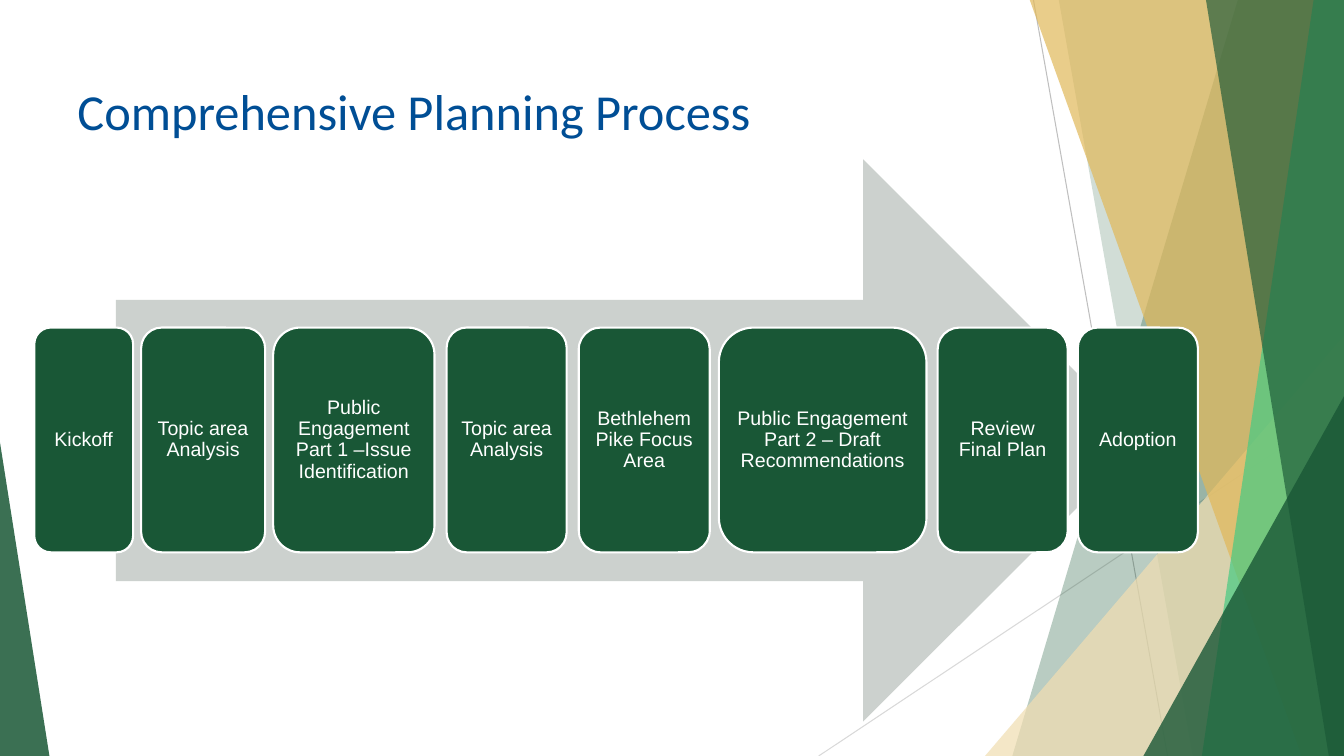
"""Builds the Comprehensive Planning Process slide."""
from dataclasses import dataclass

from lxml import etree
from pptx import Presentation
from pptx import util as u
from pptx.dml.color import RGBColor
from pptx.enum import shapes, text
from pptx.oxml import ns

PX = 9144
WIDTH, HEIGHT = 1333, 750
STEP_TOP, STEP_HEIGHT = 325, 223
STEPS = [
    (34, 98, "Kickoff"),
    (140, 123, "Topic area Analysis"),
    (271, 160, "Public Engagement Part 1 –Issue Identification"),
    (443, 119, "Topic area Analysis"),
    (574, 130, "Bethlehem Pike Focus Area"),
    (713, 206, "Public Engagement Part 2 – Draft Recommendations"),
    (930, 129, "Review Final Plan"),
    (1069, 119, "Adoption"),
]


@dataclass(frozen=True)
class Theme:
    """Colours, fonts and type sizes of the slide."""
    forest: str = "195736"
    mint: str = "46CA83"
    gold: str = "E1B859"
    sand: str = "F1DEB2"
    arrow: str = "CCD1CE"
    dark_rule: str = "BFBFBF"
    light_rule: str = "D9D9D9"
    title: str = "004E95"
    white: str = "FFFFFF"
    title_font: str = "Calibri"
    step_font: str = "Arial"
    title_size: int = 36
    step_size: int = 14


THEME = Theme()


def px(*lengths):
    """Turns pixel lengths into EMU."""
    return [u.Emu(length * PX) for length in lengths]


def paint(part, colour, opacity=100):
    """Gives a shape a flat fill without outline or shadow."""
    part.shadow.inherit = False
    part.line.fill.background()
    part.fill.solid()
    part.fill.fore_color.rgb = RGBColor.from_string(colour)
    if opacity < 100:
        tint = part.fill._xPr.find(".//" + ns.qn("a:srgbClr"))
        etree.SubElement(tint, ns.qn("a:alpha"), val=str(opacity * 1000))


def style_text(paragraph, font, size, colour):
    """Sets the typeface, size and colour of a paragraph's runs."""
    for run in paragraph.runs:
        run.font.name = font
        run.font.size = u.Pt(size)
        run.font.color.rgb = RGBColor.from_string(colour)


def add_rule(slide, start, end, colour):
    """Draws a thin straight line of the backdrop."""
    rule = slide.shapes.add_connector(
        shapes.MSO_CONNECTOR.STRAIGHT, *px(*start, *end))
    rule.line.color.rgb = RGBColor.from_string(colour)
    rule.line.width = u.Pt(0.75)
    etree.SubElement(rule._element.spPr, ns.qn("a:effectLst"))


def add_band(slide, top_x, bottom_x, colour, opacity):
    """Fills the area between a slanted edge and the slide's right side."""
    outline = slide.shapes.build_freeform(top_x, -1, scale=PX)
    outline.add_line_segments(
        [(WIDTH, -1), (WIDTH, HEIGHT), (bottom_x, HEIGHT)], close=True)
    paint(outline.convert_to_shape(), colour, opacity)


def add_corner(slide, left, top, width, peak, colour, opacity):
    """Draws a right triangle standing on the slide's bottom edge."""
    corner = slide.shapes.add_shape(
        shapes.MSO_SHAPE.ISOSCELES_TRIANGLE, *px(left, top, width, HEIGHT - top))
    corner.adjustments[0] = peak
    paint(corner, colour, opacity)


def add_backdrop(slide):
    """Layers the translucent facets from back to front."""
    add_rule(slide, (1025, 0), (1158, HEIGHT), THEME.dark_rule)
    add_rule(slide, (WIDTH, 403), (812, HEIGHT), THEME.light_rule)
    add_band(slide, 1228, 1004, THEME.forest, 30)
    add_band(slide, 1050, 1183, THEME.forest, 20)
    add_corner(slide, 977, 333, 356, 1, THEME.sand, 72)
    add_band(slide, 1021, 1291, THEME.gold, 70)
    add_band(slide, 1303, 1192, THEME.mint, 70)
    add_band(slide, 1196, 1318, THEME.forest, 65)
    add_corner(slide, 1134, 393, 199, 1, THEME.forest, 80)
    add_corner(slide, 0, 439, 49, 0, THEME.forest, 85)


def add_title(slide, wording):
    """Writes the slide title."""
    title = slide.shapes.add_textbox(*px(67, 75, 940, 144)).text_frame
    title.word_wrap = True
    title.text = wording
    style_text(title.paragraphs[0], THEME.title_font, THEME.title_size, THEME.title)


def add_process_arrow(slide):
    """Draws the broad arrow behind the steps."""
    arrow = slide.shapes.add_shape(
        shapes.MSO_SHAPE.RIGHT_ARROW, *px(115, 158, 1020, 558))
    paint(arrow, THEME.arrow)


def add_step(slide, left, width, label):
    """Draws one step of the process with its label."""
    step = slide.shapes.add_shape(
        shapes.MSO_SHAPE.ROUNDED_RECTANGLE, *px(left, STEP_TOP, width, STEP_HEIGHT))
    paint(step, THEME.forest)
    step.line.color.rgb = RGBColor.from_string(THEME.white)
    step.line.width = u.Pt(1.5)
    frame = step.text_frame
    frame.word_wrap = True
    frame.vertical_anchor = text.MSO_ANCHOR.MIDDLE
    (frame.margin_left, frame.margin_top,
     frame.margin_right, frame.margin_bottom) = px(6, 6, 6, 6)
    frame.text = label
    paragraph = frame.paragraphs[0]
    paragraph.alignment = text.PP_ALIGN.CENTER
    paragraph.line_spacing = 0.9
    style_text(paragraph, THEME.step_font, THEME.step_size, THEME.white)


def main():
    """Builds and saves the slide."""
    deck = Presentation()
    deck.slide_width, deck.slide_height = px(WIDTH, HEIGHT)
    slide = deck.slides.add_slide(deck.slide_layouts[6])
    add_backdrop(slide)
    add_title(slide, "Comprehensive Planning Process")
    add_process_arrow(slide)
    for left, width, label in STEPS:
        add_step(slide, left, width, label)
    deck.save("out.pptx")


if __name__ == "__main__":
    main()
